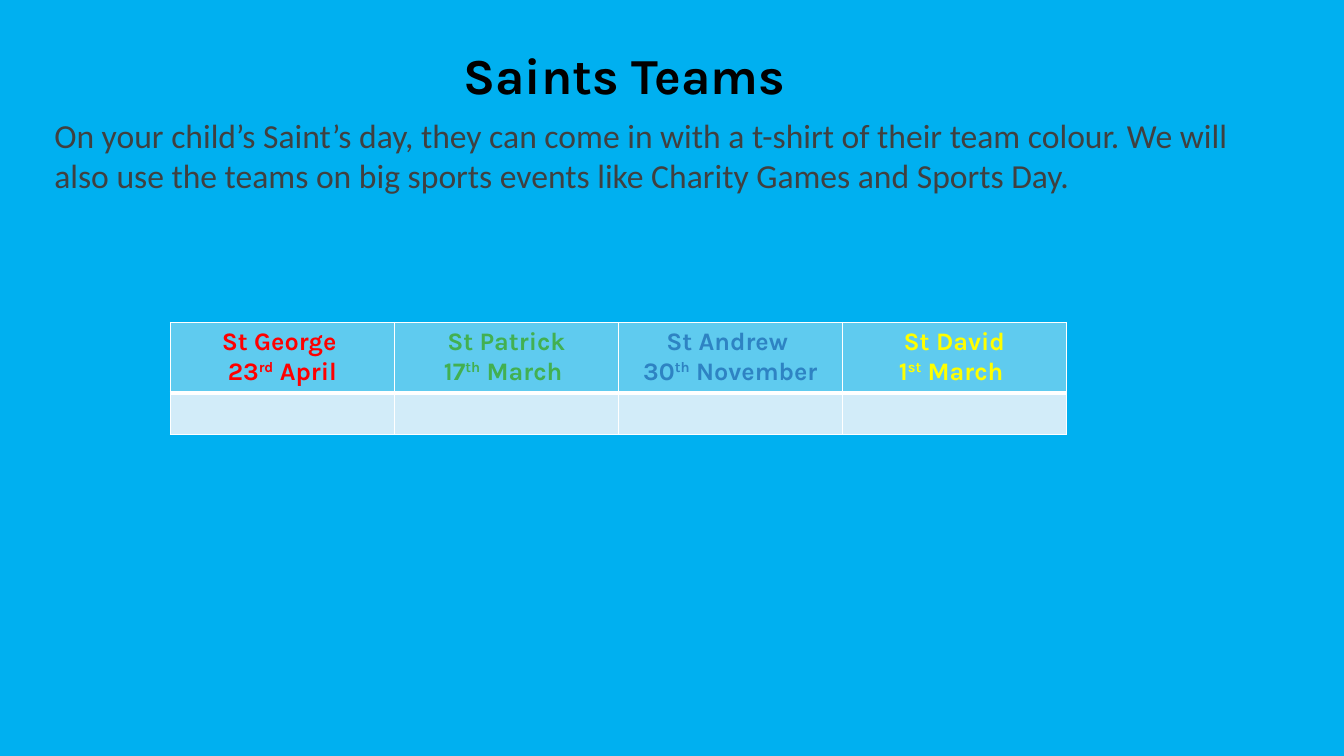
from lxml.etree import SubElement
from pptx import Presentation
from pptx.dml.color import RGBColor
from pptx.enum.text import MSO_ANCHOR, PP_ALIGN
from pptx.oxml.ns import qn
from pptx.util import Pt

COLORS = {
    "background": "00B0F0",
    "title": "000000",
    "body": "404040",
    "header": "5FCBEF",
    "row": "D2ECF9",
    "border": "FFFFFF",
    "george": "FF0000",
    "patrick": "42B051",
    "andrew": "2E83C3",
    "david": "FFFF00",
}
TEAMS = [
    ("St George ", "23", "rd", " April", "george"),
    ("St Patrick", "17", "th", " March ", "patrick"),
    ("St Andrew ", "30", "th", " November", "andrew"),
    ("St David", "1", "st", " March ", "david"),
]


def format_font(font, name, size, color, bold=False):
    font.name = name
    font.size = Pt(size)
    font.bold = bold
    font.color.rgb = RGBColor.from_string(COLORS[color])


def style_cell(cell, fill, top_width, bottom_width):
    properties = cell._tc.get_or_add_tcPr()
    widths = {"a:lnL": 1, "a:lnR": 1, "a:lnT": top_width, "a:lnB": bottom_width}
    for tag, width in widths.items():
        line = SubElement(properties, qn(tag), w=str(Pt(width)))
        solid = SubElement(line, qn("a:solidFill"))
        SubElement(solid, qn("a:srgbClr"), val=COLORS["border"])
    cell.fill.solid()
    cell.fill.fore_color.rgb = RGBColor.from_string(COLORS[fill])


presentation = Presentation()
presentation.slide_width = Pt(960)
presentation.slide_height = Pt(540)
slide = presentation.slides.add_slide(presentation.slide_layouts[5])
slide.background.fill.solid()
slide.background.fill.fore_color.rgb = RGBColor.from_string(COLORS["background"])

title = slide.shapes.title
title.left, title.top, title.width, title.height = Pt(31.7), Pt(22.3), Pt(837.4), Pt(62)
title.text_frame.text = "Saints Teams "
title.text_frame.vertical_anchor = MSO_ANCHOR.MIDDLE
title_paragraph = title.text_frame.paragraphs[0]
title_paragraph.alignment = PP_ALIGN.CENTER
format_font(title_paragraph.runs[0].font, "Karla", 36, "title", True)

body = slide.shapes.add_textbox(Pt(31.7), Pt(78.5), Pt(854), Pt(305.3))
body.text_frame.word_wrap = True
body.text_frame.text = (
    "On your child’s Saint’s day, they can come in with a t-shirt of their team colour. "
    "We will also use the teams on big sports events like Charity Games and Sports Day."
)
format_font(body.text_frame.paragraphs[0].runs[0].font, "Calibri", 24, "body")

table = slide.shapes.add_table(2, len(TEAMS), Pt(121.7), Pt(230.4), Pt(640), Pt(78.7)).table
table.rows[0].height = Pt(49.3)
table.rows[1].height = Pt(29.4)

for column, (saint, day, suffix, month, color) in enumerate(TEAMS):
    header = table.cell(0, column)
    style_cell(header, "header", 1, 3)
    style_cell(table.cell(1, column), "row", 3, 1)
    header.text_frame.text = saint
    date_paragraph = header.text_frame.add_paragraph()
    for text in (day, suffix, month):
        date_paragraph.add_run().text = text
    for paragraph in header.text_frame.paragraphs:
        paragraph.alignment = PP_ALIGN.CENTER
        for run in paragraph.runs:
            format_font(run.font, "Karla", 18, color, True)
    date_paragraph.runs[1].font._element.set("baseline", "30000")

presentation.save("out.pptx")
